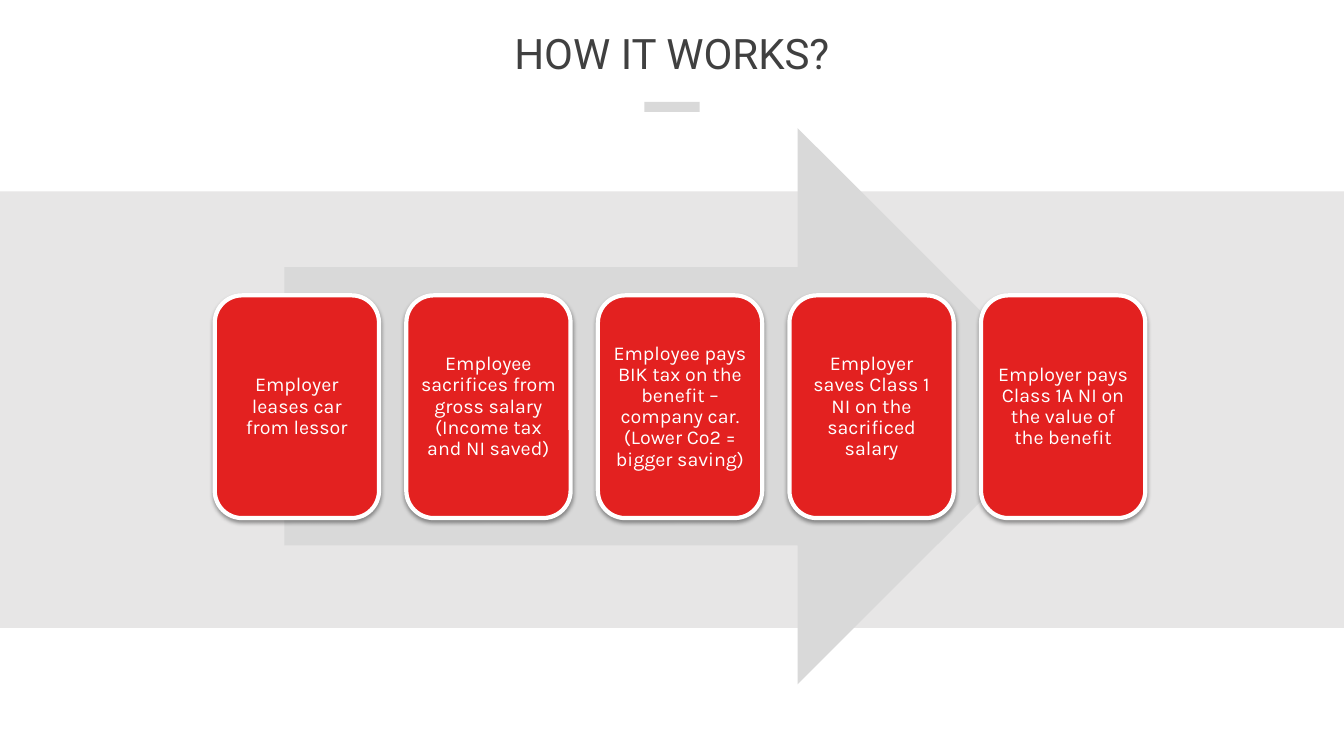
import pptx
import pptx.dml.color
import pptx.enum.shapes
import pptx.enum.text
import pptx.oxml
import pptx.oxml.ns
import pptx.util
from lxml import etree

SLIDE_W, SLIDE_H = 13.33, 7.5
CARD_LEFT, CARD_TOP, CARD_W, CARD_H = 2.13, 2.93, 1.63, 2.21
CARD_PITCH = 1.9
SHAPES = pptx.enum.shapes.MSO_SHAPE
STEPS = [
    "Employer leases car from lessor",
    "Employee sacrifices from gross salary (Income tax and NI saved)",
    "Employee pays BIK tax on the benefit – company car. (Lower Co2 = bigger saving)",
    "Employer saves Class 1 NI on the sacrificed salary",
    "Employer pays Class 1A NI on the value of the benefit",
]


def color(hex_code):
    return pptx.dml.color.RGBColor.from_string(hex_code)


def add_block(slide, preset, left, top, width, height, fill):
    """Add a plain filled shape without line or shadow; lengths in inches."""
    box = [pptx.util.Inches(length) for length in (left, top, width, height)]
    block = slide.shapes.add_shape(preset, *box)
    block.fill.solid()
    block.fill.fore_color.rgb = color(fill)
    block.line.fill.background()
    block.shadow.inherit = False
    return block


def write_text(frame, text, font, size, hex_code, line_spacing):
    frame.word_wrap = True
    frame.vertical_anchor = pptx.enum.text.MSO_ANCHOR.MIDDLE
    paragraph = frame.paragraphs[0]
    paragraph.alignment = pptx.enum.text.PP_ALIGN.CENTER
    paragraph.line_spacing = line_spacing
    run = paragraph.add_run()
    run.text = text
    run.font.name = font
    run.font.size = pptx.util.Pt(size)
    run.font.color.rgb = color(hex_code)


def add_drop_shadow(block):
    qn = pptx.oxml.ns.qn
    effects = block._element.spPr.find(qn("a:effectLst"))
    shadow = etree.SubElement(
        effects, qn("a:outerShdw"),
        blurRad=str(pptx.util.Pt(3.1)), dist=str(pptx.util.Pt(1.6)),
        dir="5400000", rotWithShape="0")
    tint = etree.SubElement(shadow, qn("a:srgbClr"), val="000000")
    etree.SubElement(tint, qn("a:alpha"), val="38000")


def add_title(slide, text):
    title = slide.shapes.title
    title.left = title.top = 0
    title.width = pptx.util.Inches(SLIDE_W)
    title.height = pptx.util.Inches(1.14)
    write_text(title.text_frame, text, "Roboto", 30, "404040", 0.8)


def add_step_card(slide, column, text):
    card = add_block(slide, SHAPES.ROUNDED_RECTANGLE,
                     CARD_LEFT + column * CARD_PITCH, CARD_TOP,
                     CARD_W, CARD_H, "E32120")
    card.line.color.rgb = color("FFFFFF")
    card.line.width = pptx.util.Pt(3)
    add_drop_shadow(card)
    frame = card.text_frame
    frame.margin_left = frame.margin_right = pptx.util.Inches(0.06)
    frame.margin_top = frame.margin_bottom = pptx.util.Inches(0.06)
    write_text(frame, text, "Karla", 14, "FFFFFF", 0.9)


def main():
    deck = pptx.Presentation()
    deck.slide_width = pptx.util.Inches(SLIDE_W)
    deck.slide_height = pptx.util.Inches(SLIDE_H)
    slide = deck.slides.add_slide(deck.slide_layouts[5])

    add_title(slide, "HOW IT WORKS?")
    add_block(slide, SHAPES.RECTANGLE, 6.39, 1.01, 0.55, 0.1, "D9D9D9")
    add_block(slide, SHAPES.RECTANGLE, 0, 1.9, SLIDE_W, 4.33, "E7E6E6")
    add_block(slide, SHAPES.RIGHT_ARROW, 2.82, 1.27, 7.85, 5.52, "D9D9D9")
    for column, step in enumerate(STEPS):
        add_step_card(slide, column, step)

    deck.save("out.pptx")


if __name__ == "__main__":
    main()
